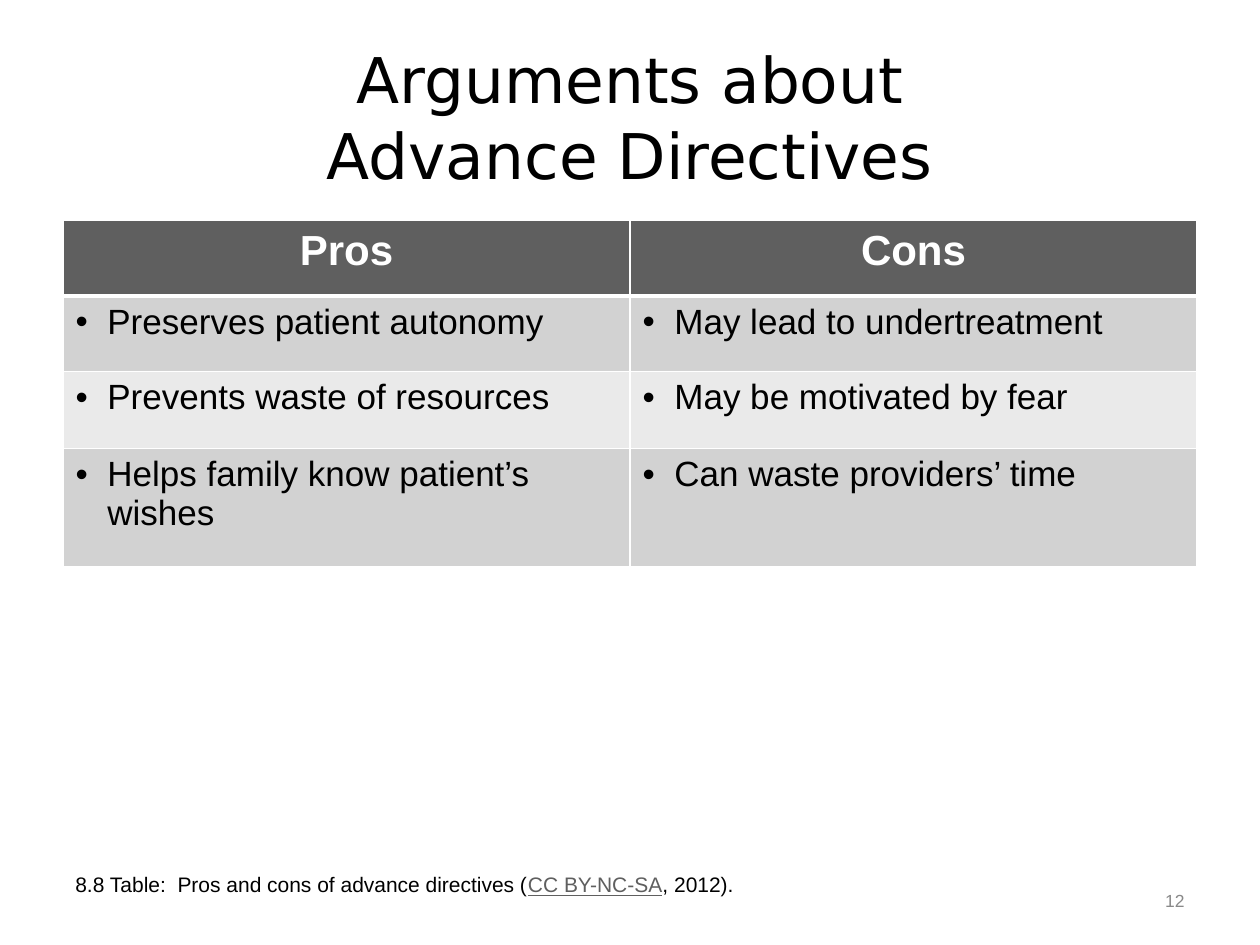
import pptx
import pptx.util
import pptx.dml.color
import pptx.enum.text
import pptx.oxml.ns
import lxml.etree

Cm, Pt = pptx.util.Cm, pptx.util.Pt
ALIGN = pptx.enum.text.PP_ALIGN
ANCHOR = pptx.enum.text.MSO_ANCHOR
FIT = pptx.enum.text.MSO_AUTO_SIZE
qn = pptx.oxml.ns.qn

COLORS = {
    "ink": "000000",
    "white": "FFFFFF",
    "head": "5F5F5F",
    "dark": "D2D2D2",
    "light": "EAEAEA",
    "muted": "898989",
}


class Deck:
    font = "Arial"
    edge = 1.27
    wide = 22.86

    def __init__(self):
        self.prs = pptx.Presentation()
        self.prs.slide_width, self.prs.slide_height = Cm(25.4), Cm(19.05)
        self.slide = self.prs.slides.add_slide(self.prs.slide_layouts[5])

    def color(self, name):
        return pptx.dml.color.RGBColor.from_string(COLORS[name])

    def run(self, para, text, size, color="ink", bold=False, line=False, font=None):
        run = para.add_run()
        run.text = text
        run.font.name = font or self.font
        run.font.size = Pt(size)
        run.font.bold = bold
        run.font.underline = line
        run.font.color.rgb = self.color(color)

    def title(self, lines, top, high):
        shape = self.slide.shapes.title
        shape.left, shape.top = Cm(self.edge), Cm(top)
        shape.width, shape.height = Cm(self.wide), Cm(high)
        frame = shape.text_frame
        frame.auto_size = FIT.NONE
        frame.vertical_anchor = ANCHOR.MIDDLE
        para = frame.paragraphs[0]
        para.alignment = ALIGN.CENTER
        for i, text in enumerate(lines):
            if i:
                para.add_line_break()
            self.run(para, text, 36, font="DejaVu Sans")

    def text(self, box, runs, align=ALIGN.LEFT, anchor=ANCHOR.TOP):
        frame = self.slide.shapes.add_textbox(*map(Cm, box)).text_frame
        frame.word_wrap = True
        frame.vertical_anchor = anchor
        para = frame.paragraphs[0]
        para.alignment = align
        for text, style in runs:
            self.run(para, text, **style)

    def bullet(self, para):
        props = para._p.get_or_add_pPr()
        props.set("marL", str(Cm(0.64)))
        props.set("indent", str(-Cm(0.64)))
        lxml.etree.SubElement(props, qn("a:buFont"), typeface="Arial")
        lxml.etree.SubElement(props, qn("a:buChar"), char="•")

    def border(self, cell, **widths):
        props = cell._tc.get_or_add_tcPr()
        for i, side in enumerate("LRTB"):
            width = Pt(widths.get(side, 1))
            line = lxml.etree.Element(qn("a:ln" + side), w=str(width))
            fill = lxml.etree.SubElement(line, qn("a:solidFill"))
            lxml.etree.SubElement(fill, qn("a:srgbClr"), val=COLORS["white"])
            props.insert(i, line)

    def table(self, top, rows, highs):
        cols = len(rows[0])
        box = map(Cm, (self.edge, top, self.wide, sum(highs)))
        table = self.slide.shapes.add_table(len(rows), cols, *box).table
        table.horz_banding = False
        for col in table.columns:
            col.width = Cm(self.wide / cols)
        for r, (texts, high) in enumerate(zip(rows, highs)):
            table.rows[r].height = Cm(high)
            for c, text in enumerate(texts):
                self.cell(table.cell(r, c), text, r)

    def cell(self, cell, text, row):
        para = cell.text_frame.paragraphs[0]
        cell.fill.solid()
        if row == 0:
            para.alignment = ALIGN.CENTER
            self.run(para, text, 24, "white", bold=True)
            fill = "head"
        else:
            self.bullet(para)
            self.run(para, text, 20)
            fill = "dark" if row % 2 else "light"
        cell.fill.fore_color.rgb = self.color(fill)
        # The rule under the header is thicker
        self.border(cell, B=3 if row == 0 else 1, T=3 if row == 1 else 1)


def main():
    deck = Deck()

    # Title
    deck.title(["Arguments about", "Advance Directives"], 0.76, 3.18)

    # Pros and cons
    deck.table(4.45, [
        ("Pros", "Cons"),
        ("Preserves patient autonomy", "May lead to undertreatment"),
        ("Prevents waste of resources", "May be motivated by fear"),
        ("Helps family know patient’s wishes", "Can waste providers’ time"),
    ], [1.52, 1.52, 1.55, 2.39])

    # Caption
    plain = {"size": 12}
    deck.text((1.27, 17.45, 21.21, 1.47), [
        ("8.8 Table:  Pros and cons of advance directives (", plain),
        ("CC BY-NC-SA", {"size": 12, "color": "head", "line": True}),
        (", 2012).", plain),
    ])

    # Page number
    deck.text((22.71, 17.4, 1.42, 1.52), [("12", {"size": 10, "color": "muted"})],
              ALIGN.RIGHT, ANCHOR.MIDDLE)

    deck.prs.save("out.pptx")


if __name__ == "__main__":
    main()
